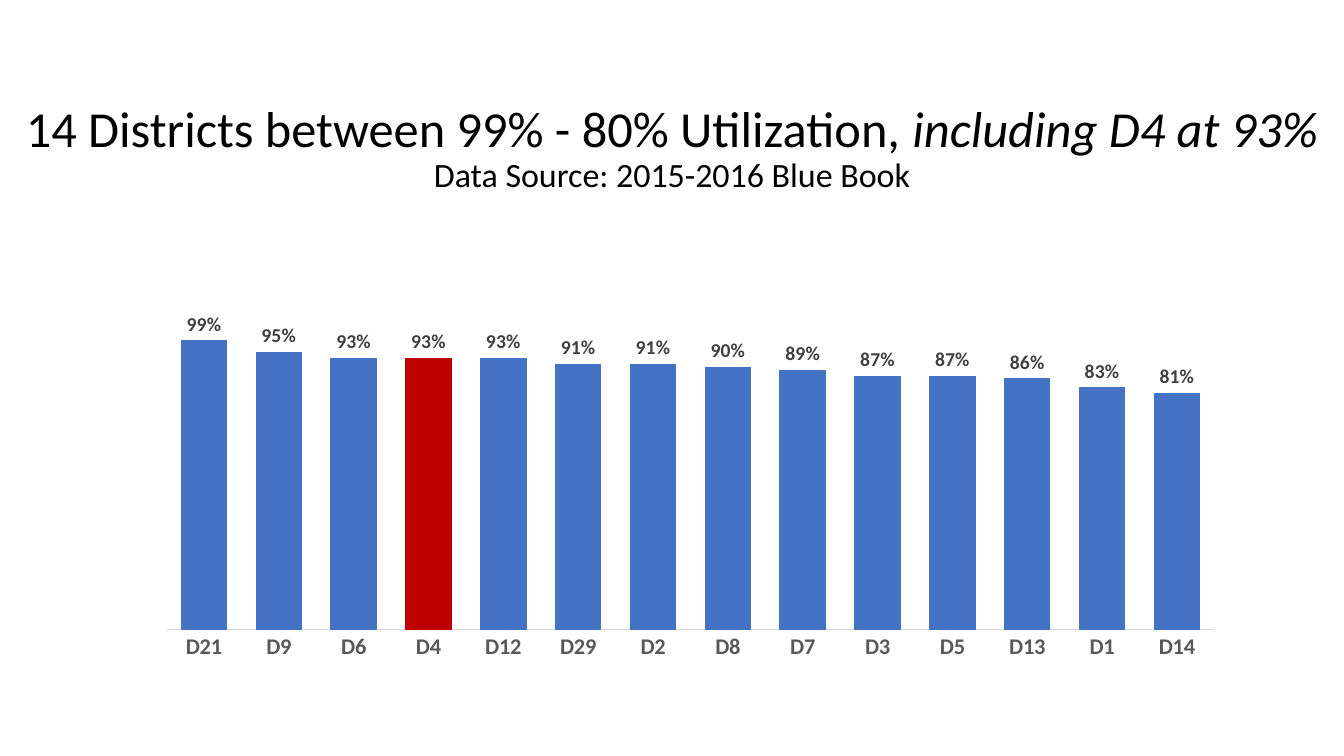
from dataclasses import dataclass

from lxml.etree import SubElement
from pptx import Presentation
from pptx.chart.chart import Chart
from pptx.chart.data import CategoryChartData as ChartData
from pptx.dml.color import RGBColor as RGB
from pptx.enum.chart import XL_CHART_TYPE as Kind
from pptx.enum.chart import XL_LABEL_POSITION as Spot
from pptx.enum.chart import XL_TICK_MARK as Tick
from pptx.enum.text import MSO_ANCHOR as Anchor
from pptx.enum.text import PP_ALIGN as Align
from pptx.oxml.ns import qn
from pptx.slide import Slide
from pptx.text.text import Font
from pptx.util import Pt

PX = 9525


@dataclass(frozen=True)
class Theme:
    face: str = "Calibri"
    ink: str = "000000"
    blue: str = "4472C4"
    red: str = "C00000"
    tag: str = "404040"
    axis: str = "595959"
    rule: str = "D9D9D9"
    head: float = 36
    sub: float = 24.3
    label: float = 14
    tick: float = 16


@dataclass(frozen=True)
class Box:
    left: int
    top: int
    width: int
    height: int

    def emu(self) -> tuple[int, ...]:
        return tuple(n * PX for n in (self.left, self.top, self.width, self.height))


@dataclass(frozen=True)
class Line:
    plain: str
    size: float
    slant: str = ""


@dataclass(frozen=True)
class Bar:
    name: str
    value: float
    marked: bool = False


THEME = Theme()
LINES = [
    Line("14 Districts between 99% - 80% Utilization, ", THEME.head, "including D4 at 93%"),
    Line("Data Source: 2015-2016 Blue Book", THEME.sub),
]
BARS = [
    Bar("D21", 0.99), Bar("D9", 0.95), Bar("D6", 0.93), Bar("D4", 0.93, True),
    Bar("D12", 0.93), Bar("D29", 0.91), Bar("D2", 0.91), Bar("D8", 0.9),
    Bar("D7", 0.89), Bar("D3", 0.87), Bar("D5", 0.87), Bar("D13", 0.86),
    Bar("D1", 0.83), Bar("D14", 0.81),
]
PLOT = {"x": 0.064, "y": 0.199, "w": 0.904, "h": 0.7}


def style(font: Font, size: float, color: str, bold: bool = False) -> None:
    font.name = THEME.face
    font.size = Pt(size)
    font.bold = bold
    font.color.rgb = RGB.from_string(color)


def add_title(slide: Slide, box: Box, lines: list[Line]) -> None:
    frame = slide.shapes.add_textbox(*box.emu()).text_frame
    frame.word_wrap = True
    frame.vertical_anchor = Anchor.BOTTOM
    frame.margin_bottom = 0
    for i, line in enumerate(lines):
        para = frame.add_paragraph() if i else frame.paragraphs[0]
        para.alignment = Align.CENTER
        para.line_spacing = 0.9
        style(para.font, line.size, THEME.ink)
        para.add_run().text = line.plain
        if line.slant:
            run = para.add_run()
            run.text = line.slant
            run.font.italic = True


def set_plot(chart: Chart) -> None:
    area = chart.element.find(f".//{qn('c:plotArea')}")
    for old in area.findall(qn("c:layout")):
        area.remove(old)
    layout = SubElement(area, qn("c:layout"))
    area.insert(0, layout)
    manual = SubElement(layout, qn("c:manualLayout"))
    parts = {"layoutTarget": "inner", "xMode": "edge", "yMode": "edge", **PLOT}
    for tag, value in parts.items():
        SubElement(manual, qn(f"c:{tag}")).set("val", str(value))


def add_bars(slide: Slide, box: Box, bars: list[Bar]) -> None:
    data = ChartData(number_format="0%")
    data.categories = [bar.name for bar in bars]
    data.add_series("Utilization", [bar.value for bar in bars])
    chart = slide.shapes.add_chart(Kind.COLUMN_CLUSTERED, *box.emu(), data).chart
    chart.has_title = False
    chart.has_legend = False
    style(chart.font, THEME.label, THEME.ink)

    cats = chart.category_axis
    cats.major_tick_mark = Tick.NONE
    cats.minor_tick_mark = Tick.NONE
    cats.format.line.color.rgb = RGB.from_string(THEME.rule)
    cats.format.line.width = Pt(0.75)
    style(cats.tick_labels.font, THEME.tick, THEME.axis, True)

    vals = chart.value_axis
    vals.visible = False
    vals.has_major_gridlines = False
    vals.minimum_scale = 0
    vals.maximum_scale = 1.2

    plot = chart.plots[0]
    plot.gap_width = 61
    plot.overlap = -27
    plot.vary_by_categories = False
    series = plot.series[0]
    series.invert_if_negative = False
    series.format.fill.solid()
    series.format.fill.fore_color.rgb = RGB.from_string(THEME.blue)
    for i, bar in enumerate(bars):
        if bar.marked:
            fill = series.points[i].format.fill
            fill.solid()
            fill.fore_color.rgb = RGB.from_string(THEME.red)

    labels = series.data_labels
    labels.show_value = True
    labels.number_format = "0%"
    labels.number_format_is_linked = False
    labels.position = Spot.OUTSIDE_END
    style(labels.font, THEME.label, THEME.tag, True)
    set_plot(chart)


def main() -> None:
    deck = Presentation()
    deck.slide_width = 1280 * PX
    deck.slide_height = 720 * PX
    slide = deck.slides.add_slide(deck.slide_layouts[6])
    add_title(slide, Box(0, 47, 1280, 139), LINES)
    add_bars(slide, Box(88, 171, 1104, 477), BARS)
    deck.save("out.pptx")


if __name__ == "__main__":
    main()
